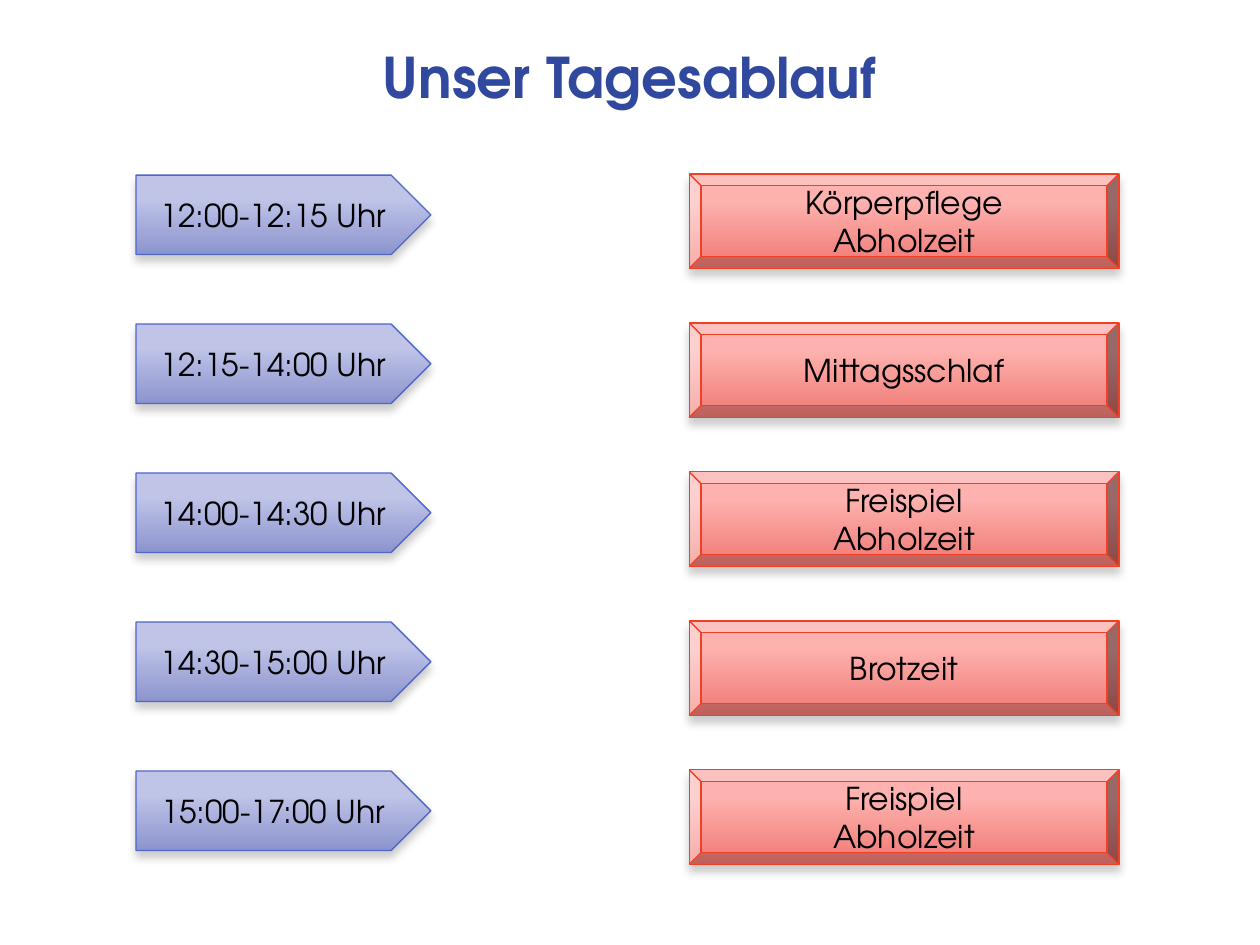
import pptx
import pptx.dml.color
import pptx.enum.shapes
import pptx.enum.text
import pptx.oxml
import pptx.oxml.ns
import pptx.util

Inches = pptx.util.Inches
Pt = pptx.util.Pt
RGBColor = pptx.dml.color.RGBColor
MSO_SHAPE = pptx.enum.shapes.MSO_SHAPE

FONT = "TeX Gyre Adventor"
BLACK = RGBColor(0x00, 0x00, 0x00)
TITLE_BLUE = RGBColor(0x31, 0x48, 0x9F)
BLUE_LINE = RGBColor(0x4E, 0x67, 0xC8)
BLUE_LIGHT = RGBColor(0xC0, 0xC5, 0xE8)
BLUE_DARK = RGBColor(0x8C, 0x94, 0xCE)
RED_LINE = RGBColor(0xF1, 0x41, 0x24)
RED_LIGHT = RGBColor(0xFD, 0xB2, 0xAF)
RED_DARK = RGBColor(0xF0, 0x78, 0x73)

SCHEDULE = [
    ("12:00-12:15 Uhr", ["Körperpflege", "Abholzeit"]),
    ("12:15-14:00 Uhr", ["Mittagsschlaf"]),
    ("14:00-14:30 Uhr", ["Freispiel", "Abholzeit"]),
    ("14:30-15:00 Uhr", ["Brotzeit"]),
    ("15:00-17:00 Uhr", ["Freispiel", "Abholzeit"]),
]


def write_lines(frame, lines, size, color, bold=False):
    """Write centred paragraphs into a text frame."""
    frame.word_wrap = True
    for index, line in enumerate(lines):
        para = frame.add_paragraph() if index else frame.paragraphs[0]
        para.alignment = pptx.enum.text.PP_ALIGN.CENTER
        span = para.add_run()
        span.text = line
        span.font.name = FONT
        span.font.size = Pt(size)
        span.font.bold = bold
        span.font.color.rgb = color


def add_shadow(shape):
    """Give a shape a soft shadow straight below it."""
    shape.shadow.inherit = False
    effects = shape._element.spPr.find(pptx.oxml.ns.qn("a:effectLst"))
    effects.append(pptx.oxml.parse_xml(
        f'<a:outerShdw {pptx.oxml.ns.nsdecls("a")} blurRad="{Pt(5)}" '
        f'dist="{Pt(4)}" dir="5400000" rotWithShape="0">'
        '<a:srgbClr val="000000"><a:alpha val="20000"/></a:srgbClr>'
        '</a:outerShdw>'))


def add_panel(page, kind, box, lines, colors):
    """Add a shaded preset shape with centred text."""
    light, dark, outline = colors
    shape = page.shapes.add_shape(kind, *map(Inches, box))
    shape.fill.gradient()
    shape.fill.gradient_angle = 270
    stops = shape.fill.gradient_stops
    for stop, position, color in zip(stops, (0.28, 1), (light, dark)):
        stop.position = position
        stop.color.rgb = color
    shape.line.color.rgb = outline
    shape.line.width = Pt(0.75)
    add_shadow(shape)
    shape.text_frame.vertical_anchor = pptx.enum.text.MSO_ANCHOR.MIDDLE
    write_lines(shape.text_frame, lines, 18, BLACK)


def add_title(page, box, text):
    """Add the slide heading."""
    heading = page.shapes.add_textbox(*map(Inches, box))
    write_lines(heading.text_frame, [text], 32, TITLE_BLUE, bold=True)


def add_schedule(page, box, entries):
    """Add one time arrow and one activity panel per entry."""
    left, top, width, height = box
    panel_width, panel_height = 3.41, 0.75
    pitch = (height - panel_height) / (len(entries) - 1)
    for index, (time, activities) in enumerate(entries):
        y = top + index * pitch
        add_panel(page, MSO_SHAPE.PENTAGON, (left, y + 0.01, 2.34, 0.63),
                  [time], (BLUE_LIGHT, BLUE_DARK, BLUE_LINE))
        add_panel(page, MSO_SHAPE.BEVEL,
                  (left + width - panel_width, y, panel_width, panel_height),
                  activities, (RED_LIGHT, RED_DARK, RED_LINE))


def main():
    """Build the daily routine slide."""
    deck = pptx.Presentation()
    deck.slide_width, deck.slide_height = Inches(10), Inches(7.5)
    page = deck.slides.add_slide(deck.slide_layouts[6])
    add_title(page, (2.28, 0.29, 5.43, 0.71), "Unser Tagesablauf")
    add_schedule(page, (1.08, 1.38, 7.8, 5.48), SCHEDULE)
    deck.save("out.pptx")


if __name__ == "__main__":
    main()
